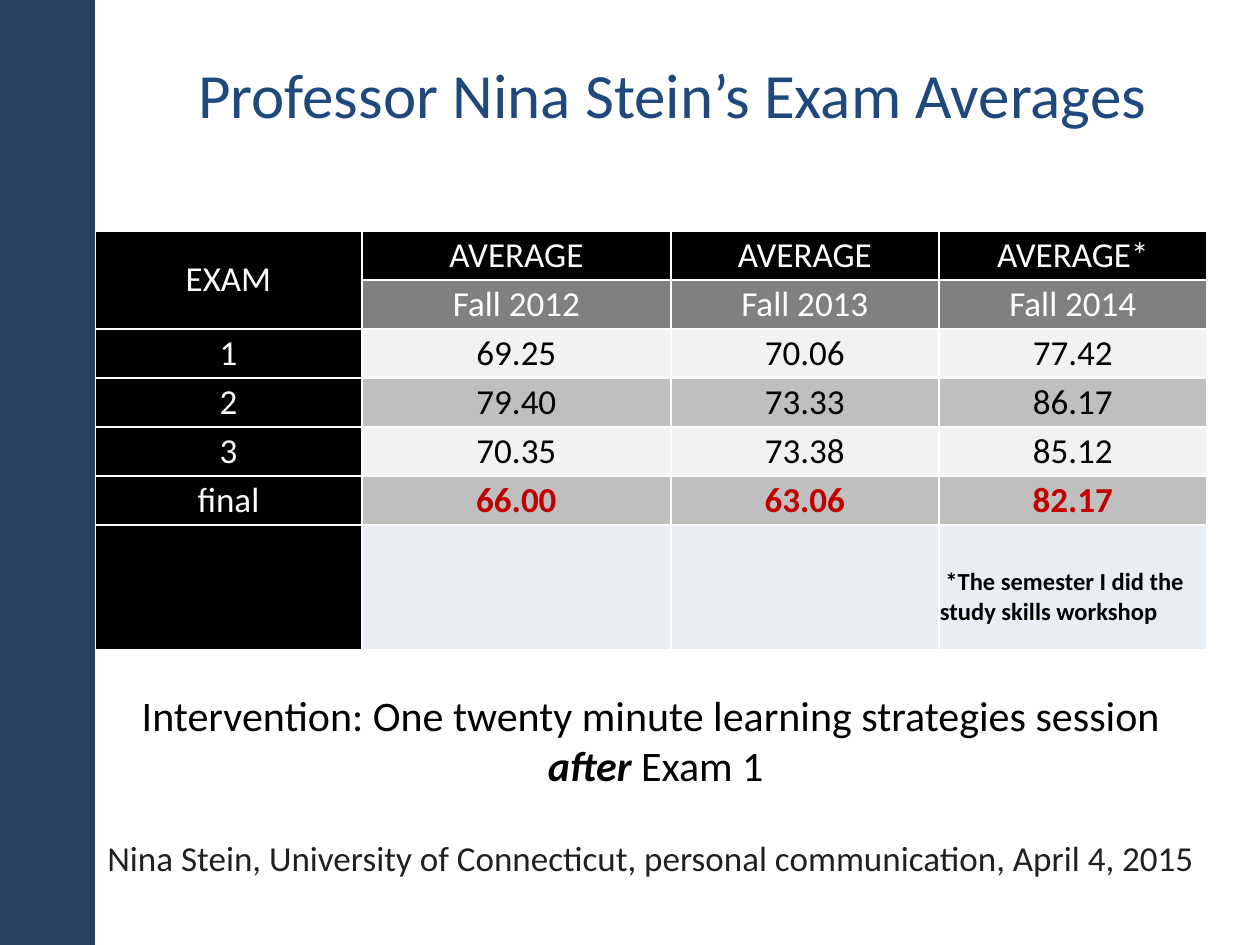
from lxml.etree import SubElement
from pptx import Presentation
from pptx.dml.color import RGBColor
from pptx.enum.shapes import MSO_SHAPE as SHAPE
from pptx.enum.text import MSO_ANCHOR as ANCHOR, PP_ALIGN as ALIGN
from pptx.oxml.ns import qn
from pptx.util import Pt

PX = 914400 // 126  # EMU per px
W, H = 1260, 945
FONT = "Calibri"
WHITE = RGBColor(0xFF, 0xFF, 0xFF)
BLACK = RGBColor(0, 0, 0)
NAVY = RGBColor(0x25, 0x40, 0x61)
TITLE_BLUE = RGBColor(0x1F, 0x49, 0x7D)
INK = RGBColor(0x23, 0x1F, 0x20)
RED = RGBColor(0xC0, 0, 0)
GRAY = RGBColor(0x80, 0x80, 0x80)
LIGHT = RGBColor(0xF2, 0xF2, 0xF2)
MID = RGBColor(0xBF, 0xBF, 0xBF)
PALE = RGBColor(0xE9, 0xED, 0xF4)

COLS = [267, 309, 268, 268]
ROWS = [49] * 6 + [125]
EXAMS = [
    ["EXAM", "AVERAGE", "AVERAGE", "AVERAGE*"],
    ["", "Fall 2012", "Fall 2013", "Fall 2014"],
    ["1", "69.25", "70.06", "77.42"],
    ["2", "79.40", "73.33", "86.17"],
    ["3", "70.35", "73.38", "85.12"],
    ["final", "66.00", "63.06", "82.17"],
    ["", "", "", "\u00a0*The semester I did the study skills workshop".replace("\u00a0", " ")],
]
# Fill and font colour of the average columns, by row
ROW_STYLES = [(BLACK, WHITE), (GRAY, WHITE), (LIGHT, BLACK), (MID, BLACK),
              (LIGHT, BLACK), (MID, RED), (PALE, BLACK)]


def emu(*lengths):
    return [n * PX for n in lengths]


def style(p, size, color, align=ALIGN.CENTER, bold=None):
    p.alignment = align
    f = p.font
    f.name, f.size, f.bold = FONT, Pt(size), bold
    f.color.rgb = color


def add_text(s, box, paragraphs, size, color, align=ALIGN.CENTER, anchor=ANCHOR.TOP):
    """Each paragraph is a list of (text, emphasised) runs."""
    tf = s.shapes.add_textbox(*emu(*box)).text_frame
    tf.word_wrap = True
    tf.vertical_anchor = anchor
    for i, runs in enumerate(paragraphs):
        p = tf.add_paragraph() if i else tf.paragraphs[0]
        style(p, size, color, align)
        for text, emphasised in runs:
            r = p.add_run()
            r.text = text
            if emphasised:
                r.font.bold = r.font.italic = True


def set_borders(cell):
    tc_pr = cell._tc.get_or_add_tcPr()
    for i, side in enumerate(("a:lnL", "a:lnR", "a:lnT", "a:lnB")):
        ln = tc_pr.makeelement(qn(side), {"w": str(Pt(1))})
        fill = SubElement(ln, qn("a:solidFill"))
        SubElement(fill, qn("a:srgbClr"), val=str(WHITE))
        tc_pr.insert(i, ln)  # borders come before the fill


def exam_table(s, box):
    table = s.shapes.add_table(len(ROWS), len(COLS), *emu(*box)).table
    for col, width in zip(table.columns, COLS):
        col.width = width * PX
    for row, height in zip(table.rows, ROWS):
        row.height = height * PX
    for i, (texts, (fill, color)) in enumerate(zip(EXAMS, ROW_STYLES)):
        for j, text in enumerate(texts):
            cell = table.cell(i, j)
            cell.fill.solid()
            cell.fill.fore_color.rgb = fill if j else BLACK
            set_borders(cell)
            cell.margin_left = cell.margin_right = PX
            cell.margin_top = cell.margin_bottom = PX
            cell.vertical_anchor = ANCHOR.MIDDLE
            cell.text = text
            style(cell.text_frame.paragraphs[0], 20, color if j else WHITE,
                  bold=color == RED and j > 0)
    table.cell(0, 0).merge(table.cell(1, 0))
    # Footnote
    note = table.cell(len(ROWS) - 1, len(COLS) - 1)
    note.vertical_anchor = ANCHOR.BOTTOM
    note.margin_bottom = 23 * PX
    style(note.text_frame.paragraphs[0], 14, BLACK, ALIGN.LEFT, bold=True)


def sidebar(s, box):
    bar = s.shapes.add_shape(SHAPE.RECTANGLE, *emu(*box))
    bar.shadow.inherit = False
    bar.fill.solid()
    bar.fill.fore_color.rgb = NAVY
    bar.line.fill.background()


def main():
    prs = Presentation()
    prs.slide_width, prs.slide_height = emu(W, H)
    s = prs.slides.add_slide(prs.slide_layouts[6])

    # Title
    add_text(s, (137, 14, 1071, 158), [[("Professor Nina Stein’s Exam Averages", False)]],
             36, TITLE_BLUE, anchor=ANCHOR.MIDDLE)
    exam_table(s, (95, 231, sum(COLS), sum(ROWS)))
    # Intervention
    add_text(s, (95, 683, 1112, 115),
             [[("Intervention: One twenty minute learning strategies session", False)],
              [(" ", False), ("after", True), (" Exam 1", False)]], 24, BLACK)
    # Source of the data
    add_text(s, (95, 830, 1139, 55),
             [[("Nina Stein, University of Connecticut, personal communication, April 4, 2015",
                False)]], 20, INK, ALIGN.LEFT)
    sidebar(s, (0, 0, 95, H))
    prs.save("out.pptx")


if __name__ == "__main__":
    main()
